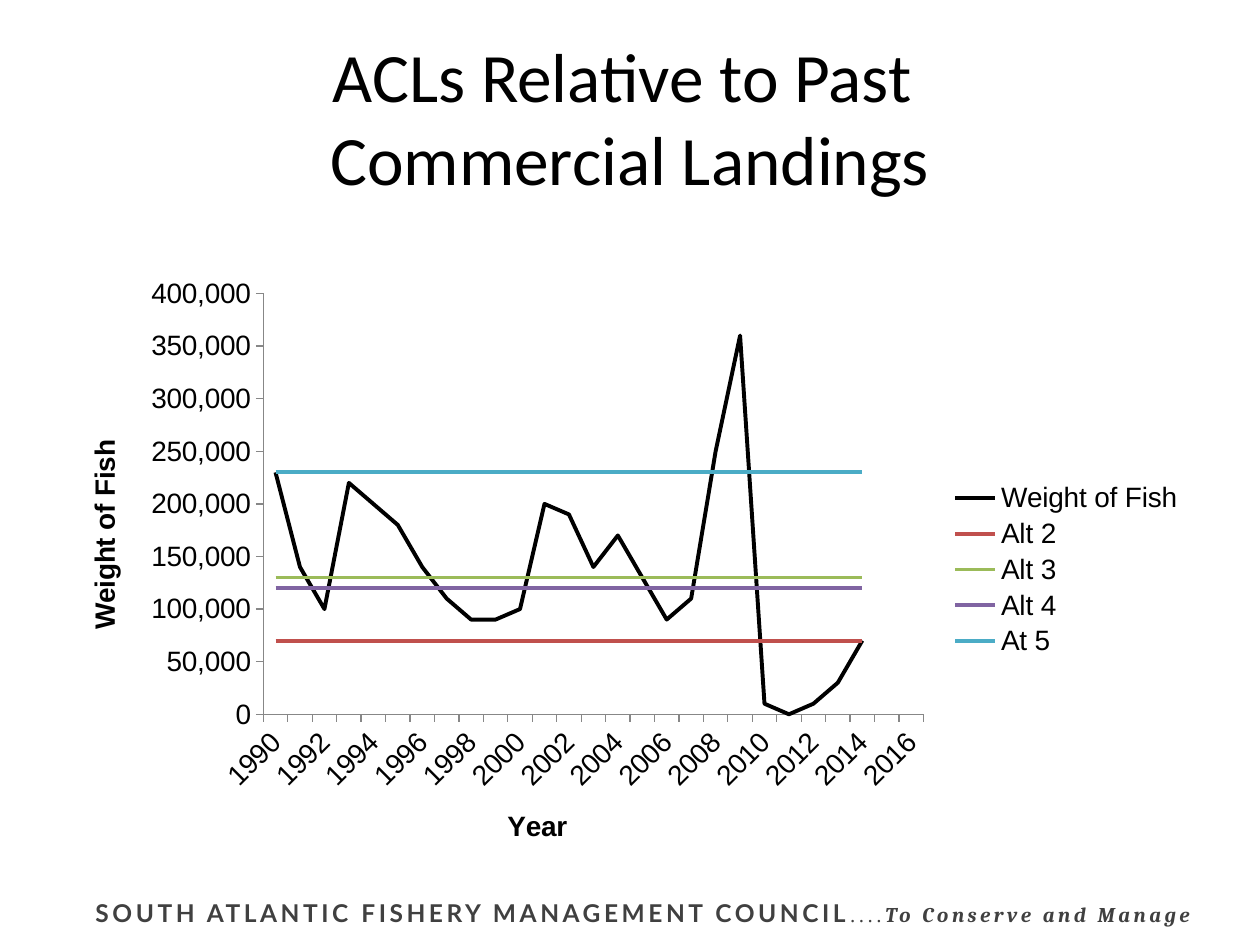
from lxml.etree import SubElement
from pptx import Presentation
from pptx.chart.data import CategoryChartData
from pptx.dml.color import RGBColor
from pptx.enum.chart import XL_CHART_TYPE as ChartType, XL_LEGEND_POSITION as LegendPos
from pptx.enum.chart import XL_TICK_MARK as Tick
from pptx.enum.text import MSO_ANCHOR, PP_ALIGN
from pptx.oxml.ns import qn
from pptx.util import Inches, Pt

COLORS = {
    "text": "000000", "footer": "404040", "axis": "878787",
    "Weight of Fish": "000000", "Alt 2": "C0504D", "Alt 3": "9BBB59",
    "Alt 4": "8064A2", "At 5": "4BACC6",
}
LANDINGS = [230000, 140000, 100000, 220000, 200000, 180000, 140000, 110000, 90000,
            90000, 100000, 200000, 190000, 140000, 170000, 130000, 90000, 110000,
            250000, 360000, 10000, 0, 10000, 30000, 70000]
LIMITS = {"Alt 2": 70000, "Alt 3": 130000, "Alt 4": 120000, "At 5": 230000}


def set_font(font, name, size, color, bold=False, italic=False):
    font.name, font.size, font.bold, font.italic = name, Pt(size), bold, italic
    font.color.rgb = RGBColor.from_string(COLORS[color])


prs = Presentation()
prs.slide_width, prs.slide_height = Inches(10), Inches(7.5)
s = prs.slides.add_slide(prs.slide_layouts[5])

# Footer
tf = s.shapes.add_textbox(Inches(0.66), Inches(7.08), Inches(9.34), Inches(0.34)).text_frame
tf.word_wrap = True
p = tf.paragraphs[0]
for text, name, size, bold, italic in [
    ("SOUTH ATLANTIC FISHERY MANAGEMENT COUNCIL", "Lato", 14, True, False),
    ("....", "Times New Roman", 12, False, False),
    ("To Conserve and Manage", "Cambria", 12, True, True),
]:
    r = p.add_run()
    r.text = text
    set_font(r.font, name, size, "footer", bold, italic)
    r.font._element.set("spc", "200")

# Title
title = s.shapes.title
title.left, title.top = Inches(0.5), Inches(0.3)
title.width, title.height = Inches(9), Inches(1.25)
tf = title.text_frame
tf.vertical_anchor = MSO_ANCHOR.MIDDLE
p = tf.paragraphs[0]
p.text = "ACLs Relative to Past \vCommercial Landings"
p.alignment = PP_ALIGN.CENTER
set_font(p.font, "Calibri", 39.6, "text")

# Landings against the proposed limits
data = CategoryChartData(number_format="#,##0")
data.categories = [str(year) for year in range(1990, 2017)]
data.add_series("Weight of Fish", LANDINGS)
for name, limit in LIMITS.items():
    data.add_series(name, [limit] * len(LANDINGS))
frame = s.shapes.add_chart(ChartType.LINE, Inches(0.5), Inches(2.12),
                           Inches(9), Inches(4.8), data)
chart = frame.chart
chart.has_title = False
set_font(chart.font, "Arial", 16, "text")
chart.has_legend = True
chart.legend.position = LegendPos.RIGHT
chart.legend.include_in_layout = False
chart.plots[0].vary_by_categories = False
for series in chart.plots[0].series:
    series.smooth = False
    series.format.line.width = Pt(2.25)
    series.format.line.color.rgb = RGBColor.from_string(COLORS[series.name])

for axis, text in [(chart.category_axis, "Year"), (chart.value_axis, "Weight of Fish")]:
    axis.has_major_gridlines = False
    axis.major_tick_mark, axis.minor_tick_mark = Tick.OUTSIDE, Tick.NONE
    axis.format.line.width = Pt(0.75)
    axis.format.line.color.rgb = RGBColor.from_string(COLORS["axis"])
    set_font(axis.tick_labels.font, "Arial", 16, "text")
    p = axis.axis_title.text_frame.paragraphs[0]
    p.text = text
    set_font(p.font, "Arial", 16, "text", bold=True)

chart.value_axis.minimum_scale, chart.value_axis.maximum_scale = 0, 400000
chart.value_axis.major_unit = 50000
chart.value_axis.tick_labels.number_format = "#,##0"
chart.value_axis.tick_labels.number_format_is_linked = False
# Slant the year labels upwards by 45 degrees
chart.category_axis._element.txPr.bodyPr.set("rot", "-2700000")

# Fix the inner plot area, as fractions of the chart frame
plot_area = chart._chartSpace.chart.plotArea
for old in plot_area.findall(qn("c:layout")):
    plot_area.remove(old)
layout = SubElement(plot_area, qn("c:layout"))
plot_area.insert(0, layout)
manual = SubElement(layout, qn("c:manualLayout"))
for tag, value in [
    ("layoutTarget", "inner"), ("xMode", "edge"), ("yMode", "edge"),
    ("x", Inches(1.59) / frame.width), ("y", Inches(0.21) / frame.height),
    ("w", Inches(5.24) / frame.width), ("h", Inches(3.34) / frame.height),
]:
    SubElement(manual, qn(f"c:{tag}")).set("val", str(value))

prs.save("out.pptx")
